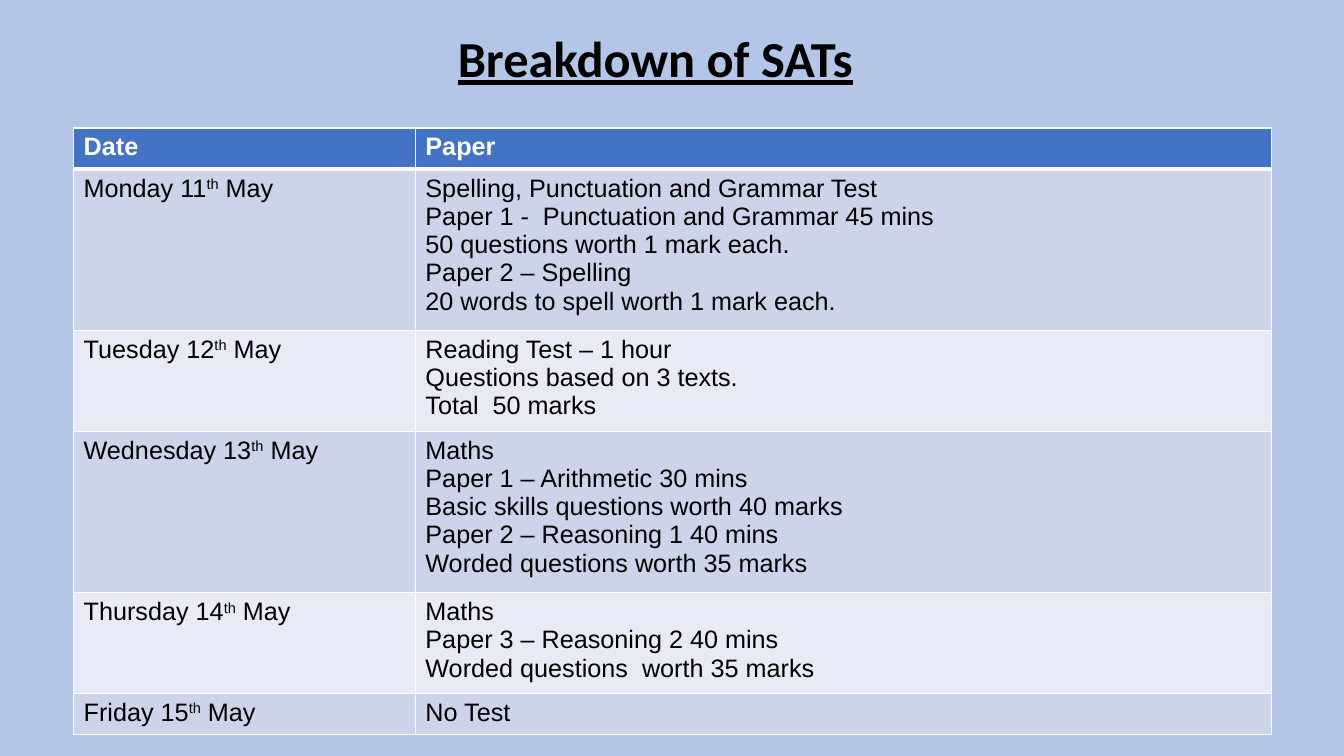
from lxml.etree import SubElement
from pptx import Presentation
from pptx.dml.color import RGBColor
from pptx.enum.text import MSO_AUTO_SIZE, MSO_VERTICAL_ANCHOR as Anchor, PP_ALIGN as Align
from pptx.oxml.ns import qn
from pptx.util import Inches, Pt

BACKGROUND = RGBColor(0xB3, 0xC6, 0xE7)
HEADER = RGBColor(0x44, 0x72, 0xC4)
BANDS = (RGBColor(0xCD, 0xD4, 0xEA), RGBColor(0xE8, 0xEB, 0xF5))
WHITE = RGBColor(0xFF, 0xFF, 0xFF)
BLACK = RGBColor(0, 0, 0)

COLUMN_WIDTHS = (3.39, 8.49)
ROW_HEIGHTS = {1: 0.41, 3: 1.0, 5: 1.6}
TITLE_FORMAT = {"name": "Calibri", "size": Pt(36), "bold": True, "underline": True}
HEADER_FORMAT = {"name": "Arial", "size": Pt(18), "bold": True}
BODY_FORMAT = {**HEADER_FORMAT, "bold": False}

TESTS = [
    ("Monday 11", [
        "Spelling, Punctuation and Grammar Test",
        "Paper 1 -  Punctuation and Grammar 45 mins",
        "50 questions worth 1 mark each.",
        "Paper 2 – Spelling",
        "20 words to spell worth 1 mark each.",
    ]),
    ("Tuesday 12", [
        "Reading Test – 1 hour",
        "Questions based on 3 texts.",
        "Total  50 marks",
    ]),
    ("Wednesday 13", [
        "Maths",
        "Paper 1 – Arithmetic 30 mins",
        "Basic skills questions worth 40 marks",
        "Paper 2 – Reasoning 1 40 mins",
        "Worded questions worth 35 marks",
    ]),
    ("Thursday 14", [
        "Maths",
        "Paper 3 – Reasoning 2 40 mins",
        "Worded questions  worth 35 marks",
    ]),
    ("Friday 15", ["No Test"]),
]


def add_span(para, text, color, formats):
    """Add one formatted run to a paragraph."""
    span = para.add_run()
    span.text = text
    for name, value in formats.items():
        setattr(span.font, name, value)
    span.font.color.rgb = color
    return span


def add_title(page, text):
    """Place and format the slide title."""
    title = page.shapes.title
    title.left, title.top = Inches(4.44), Inches(0.22)
    title.width, title.height = Inches(4.45), Inches(0.71)
    frame = title.text_frame
    settings = {"word_wrap": True, "auto_size": MSO_AUTO_SIZE.NONE,
                "vertical_anchor": Anchor.TOP}
    for name, value in settings.items():
        setattr(frame, name, value)
    para = frame.paragraphs[0]
    para.alignment = Align.LEFT
    add_span(para, text, BLACK, TITLE_FORMAT)


def style_cell(cell, fill, top=1, bottom=1):
    """Give a cell white borders and a solid fill."""
    properties = cell._tc.get_or_add_tcPr()
    for side, width in {"L": 1, "R": 1, "T": top, "B": bottom}.items():
        line = SubElement(properties, qn(f"a:ln{side}"), w=str(Pt(width)))
        solid = SubElement(line, qn("a:solidFill"))
        SubElement(solid, qn("a:srgbClr"), val=str(WHITE))
    cell.fill.solid()
    cell.fill.fore_color.rgb = fill


def write_date(cell, day):
    """Write a date in May with a raised ordinal ending."""
    para = cell.text_frame.paragraphs[0]
    add_span(para, day, BLACK, BODY_FORMAT)
    ending = add_span(para, "th", BLACK, BODY_FORMAT)
    ending._r.get_or_add_rPr().set("baseline", "30000")
    add_span(para, " May", BLACK, BODY_FORMAT)


def write_lines(cell, lines, color, formats):
    """Write each line as its own paragraph."""
    frame = cell.text_frame
    for index, text in enumerate(lines):
        para = frame.add_paragraph() if index else frame.paragraphs[0]
        add_span(para, text, color, formats)


def add_timetable(page, tests):
    """Add the table of test dates and papers."""
    heights = [ROW_HEIGHTS[1]] + [ROW_HEIGHTS[len(lines)] for _, lines in tests]
    table = page.shapes.add_table(
        len(heights), len(COLUMN_WIDTHS), Inches(0.73), Inches(1.27),
        Inches(sum(COLUMN_WIDTHS)), Inches(sum(heights))).table
    for column, width in zip(table.columns, COLUMN_WIDTHS):
        column.width = Inches(width)
    for row, height in zip(table.rows, heights):
        row.height = Inches(height)
    for cell, label in zip(table.rows[0].cells, ("Date", "Paper")):
        style_cell(cell, HEADER, bottom=3)
        write_lines(cell, [label], WHITE, HEADER_FORMAT)
    for index, (day, lines) in enumerate(tests):
        cells = list(table.rows[index + 1].cells)
        for cell in cells:
            style_cell(cell, BANDS[index % 2], top=1 if index else 3)
        write_date(cells[0], day)
        write_lines(cells[1], lines, BLACK, BODY_FORMAT)


def main():
    """Build and save the slide."""
    deck = Presentation()
    deck.slide_width, deck.slide_height = Inches(13.33), Inches(7.5)
    page = deck.slides.add_slide(deck.slide_layouts[5])
    page.background.fill.solid()
    page.background.fill.fore_color.rgb = BACKGROUND
    add_title(page, "Breakdown of SATs")
    add_timetable(page, TESTS)
    deck.save("out.pptx")


if __name__ == "__main__":
    main()
